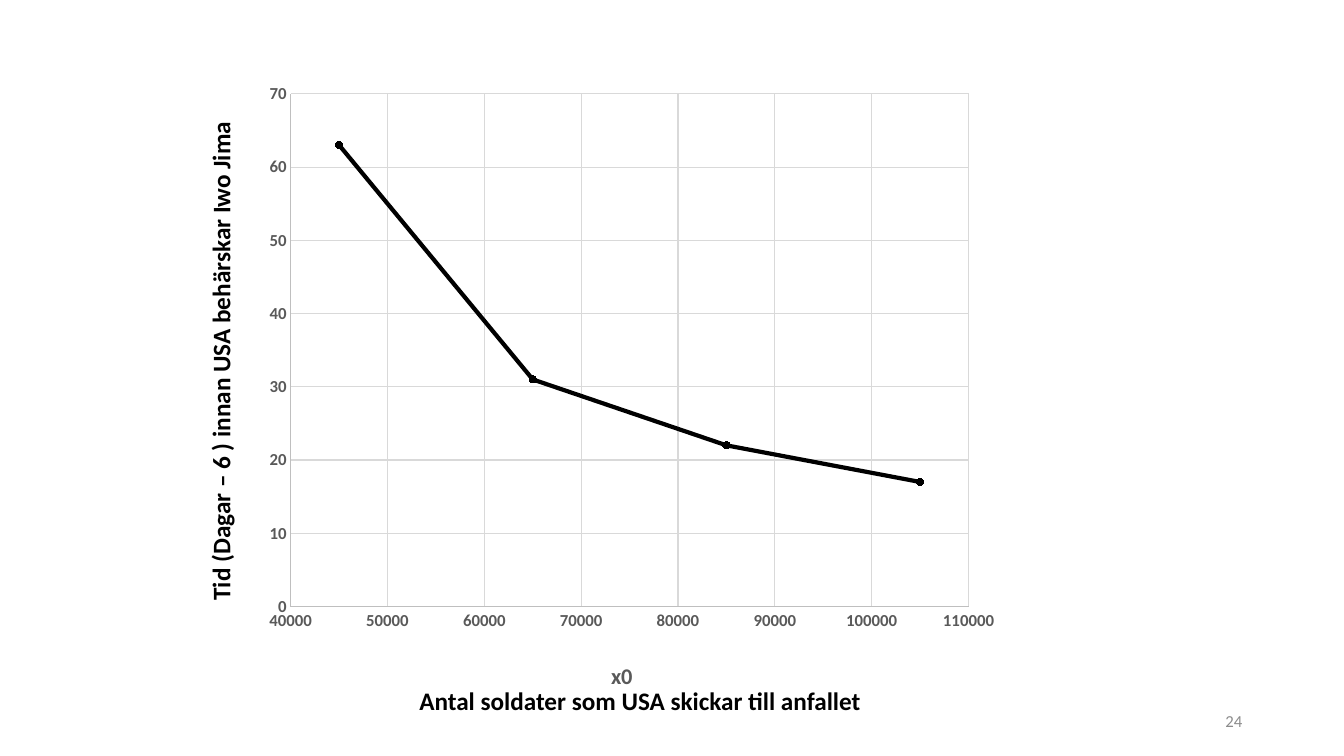
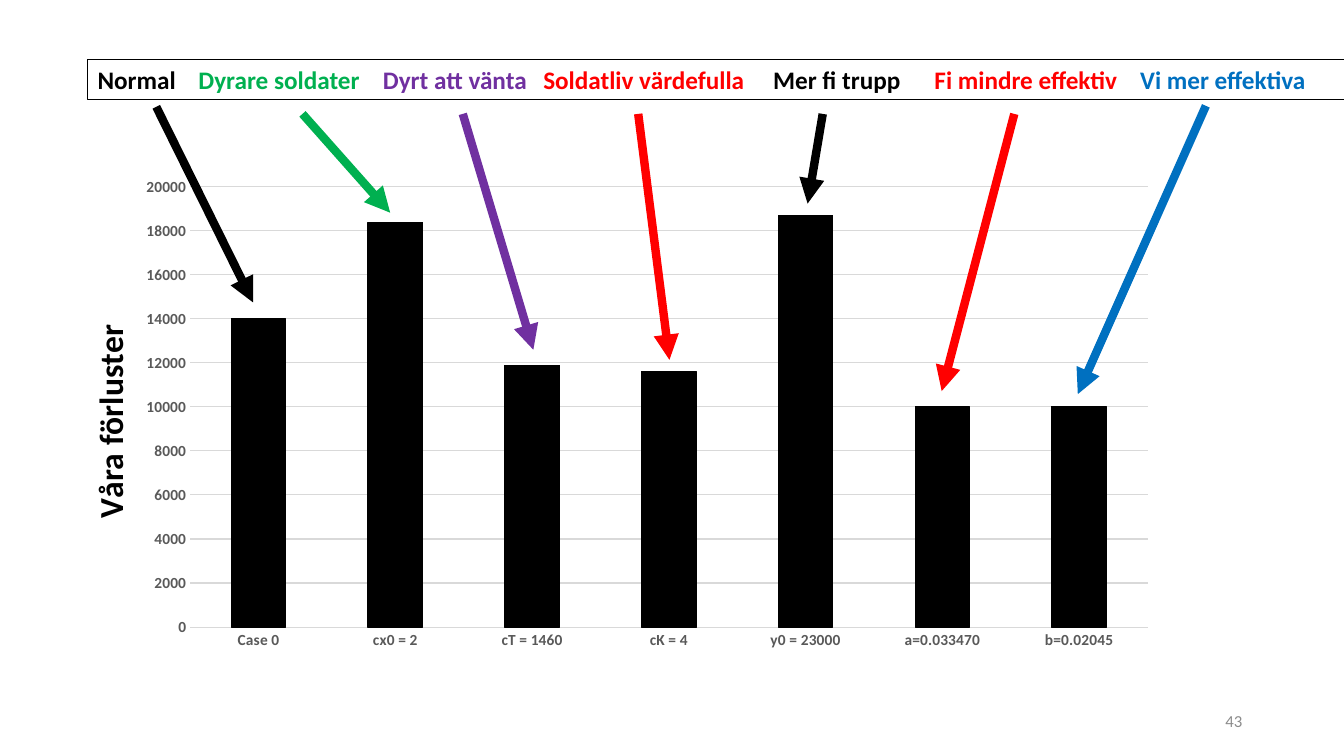
from dataclasses import dataclass

from lxml.etree import SubElement
from pptx import Presentation
from pptx.chart.axis import _BaseAxis as Axis
from pptx.chart.chart import Chart
from pptx.chart.data import CategoryChartData, XyChartData
from pptx.dml.color import RGBColor
from pptx.enum.chart import XL_CHART_TYPE, XL_MARKER_STYLE, XL_TICK_MARK
from pptx.enum.shapes import MSO_CONNECTOR, MSO_SHAPE
from pptx.enum.text import MSO_ANCHOR, PP_ALIGN
from pptx.oxml import parse_xml
from pptx.oxml.ns import nsdecls, qn
from pptx.presentation import Presentation as Deck
from pptx.slide import Slide
from pptx.util import Inches, Pt

FONT = "Calibri"
COLORS = {
    "black": "000000",
    "green": "00B050",
    "purple": "7030A0",
    "red": "FF0000",
    "blue": "0070C0",
    "axis_text": "595959",
    "axis_line": "BFBFBF",
    "grid": "D9D9D9",
    "page": "8C8C8C",
}


@dataclass(frozen=True)
class Box:
    left: float
    top: float
    width: float
    height: float

    def emu(self) -> tuple[int, int, int, int]:
        return (Inches(self.left), Inches(self.top),
                Inches(self.width), Inches(self.height))


@dataclass(frozen=True)
class Callout:
    label: str
    color: str
    tab: float
    start: tuple[float, float]
    end: tuple[float, float]


@dataclass(frozen=True)
class Scale:
    low: float
    high: float
    step: float


CALLOUTS = [
    Callout("Normal", "black", 0, (1.55, 1.06), (2.51, 3)),
    Callout("Dyrare soldater", "green", 1, (3, 1.13), (3.87, 2.11)),
    Callout("Dyrt att vänta", "purple", 2.83, (4.59, 1.13), (5.29, 3.47)),
    Callout("Soldatliv värdefulla", "red", 4.42, (6.33, 1.13), (6.64, 3.57)),
    Callout("Mer fi trupp", "black", 6.7, (8.16, 1.13), (8.01, 2.02)),
    Callout("Fi mindre effektiv", "red", 8.3, (10.06, 1.13), (9.34, 3.88)),
    Callout("Vi mer effektiva", "blue", 10.34, (11.96, 1.05), (10.69, 3.91)),
]
DAYS = [(45000, 63), (65000, 31), (85000, 22), (105000, 17)]
LOSSES = {
    "Case 0": 14000,
    "cx0 = 2": 18400,
    "cT = 1460": 11900,
    "cK = 4": 11600,
    "y0 = 23000": 18700,
    "a=0.033470": 10000,
    "b=0.02045": 10000,
}


def rgb(name: str) -> RGBColor:
    return RGBColor.from_string(COLORS[name])


def style_font(font, size: float, color: str, bold: bool = True) -> None:
    font.name, font.size, font.bold = FONT, Pt(size), bold
    font.color.rgb = rgb(color)


def style_line(line, color: str, width: float = 0.75) -> None:
    line.color.rgb = rgb(color)
    line.width = Pt(width)


def add_text(slide: Slide, text: str, box: Box, size: float = 18,
             color: str = "black", bold: bool = True, wrap: bool = True,
             align: PP_ALIGN = PP_ALIGN.LEFT, rotation: float = 0) -> None:
    sp = slide.shapes.add_textbox(*box.emu())
    sp.rotation = rotation
    tf = sp.text_frame
    tf.word_wrap = wrap
    tf.vertical_anchor = MSO_ANCHOR.MIDDLE
    p = tf.paragraphs[0]
    p.text, p.alignment = text, align
    style_font(p.font, size, color, bold)


def new_slide(prs: Deck, number: int) -> Slide:
    slide = prs.slides.add_slide(prs.slide_layouts[6])
    add_text(slide, str(number), Box(9.42, 6.95, 3, 0.4), 12, "page",
             bold=False, align=PP_ALIGN.RIGHT)
    return slide


def set_layout(parent, index: int, **parts: float) -> None:
    for old in parent.findall(qn("c:layout")):
        parent.remove(old)
    target = '<c:layoutTarget val="inner"/>' if "w" in parts else ""
    modes = "".join(f'<c:{k}Mode val="edge"/>' for k in "xy")
    values = "".join(f'<c:{k} val="{v}"/>' for k, v in parts.items())
    parent.insert(index, parse_xml(
        f'<c:layout {nsdecls("c")}><c:manualLayout>{target}{modes}{values}'
        "</c:manualLayout></c:layout>"))


def style_chart(chart: Chart, x: float, y: float, w: float, h: float) -> None:
    chart.has_legend = False
    chart.has_title = False
    style_font(chart.font, 10, "black", bold=False)
    chart.plots[0].vary_by_categories = False
    plot_area = chart._chartSpace.chart.plotArea
    set_layout(plot_area, 0, x=x, y=y, w=w, h=h)


def style_axis(axis: Axis, size: float, line: str | None, grid: bool,
               scale: Scale | None = None) -> None:
    axis.major_tick_mark = axis.minor_tick_mark = XL_TICK_MARK.NONE
    style_font(axis.tick_labels.font, size, "axis_text")
    if line:
        style_line(axis.format.line, line)
    else:
        axis.format.line.fill.background()
    axis.has_major_gridlines = grid
    if grid:
        style_line(axis.major_gridlines.format.line, "grid")
    if scale:
        axis.minimum_scale, axis.maximum_scale = scale.low, scale.high
        axis.major_unit = scale.step


def title_axis(axis: Axis, text: str, size: float, color: str,
               x: float, y: float) -> None:
    title = axis.axis_title
    p = title.text_frame.paragraphs[0]
    p.text = text
    style_font(p.font, size, color)
    set_layout(title._element, 1, x=x, y=y)


def add_arrow(slide: Slide, callout: Callout) -> None:
    ends = [Inches(v) for v in (*callout.start, *callout.end)]
    cx = slide.shapes.add_connector(MSO_CONNECTOR.STRAIGHT, *ends)
    style_line(cx.line, callout.color, 6)
    SubElement(cx.line._get_or_add_ln(), qn("a:tailEnd"), type="triangle")
    SubElement(cx._element.spPr, qn("a:effectLst"))


def add_label_bar(slide: Slide, box: Box) -> None:
    sp = slide.shapes.add_shape(MSO_SHAPE.RECTANGLE, *box.emu())
    sp.shadow.inherit = False
    sp.fill.background()
    style_line(sp.line, "black")
    p = sp.text_frame.paragraphs[0]
    p.alignment = PP_ALIGN.LEFT
    tabs = SubElement(p._p.get_or_add_pPr(), qn("a:tabLst"))
    for i, callout in enumerate(CALLOUTS):
        if i:
            SubElement(tabs, qn("a:tab"), pos=str(Inches(callout.tab)), algn="l")
        r = p.add_run()
        r.text = ("\t" if i else "") + callout.label
        style_font(r.font, 18, callout.color)


def build_days_slide(prs: Deck) -> None:
    slide = new_slide(prs, 24)
    data = XyChartData()
    points = data.add_series("Series 1")
    for soldiers, days in DAYS:
        points.add_data_point(soldiers, days)
    chart = slide.shapes.add_chart(
        XL_CHART_TYPE.XY_SCATTER_LINES, *Box(2.51, 0.68, 7.47, 6.28).emu(), data).chart
    style_chart(chart, 0.05, 0.04, 0.9, 0.81)
    style_axis(chart.category_axis, 12, "axis_line", True, Scale(40000, 110000, 10000))
    style_axis(chart.value_axis, 12, "axis_line", True, Scale(0, 70, 10))
    title_axis(chart.category_axis, "x0", 16, "axis_text", 0.47, 0.93)
    series = chart.plots[0].series[0]
    series.smooth = False
    style_line(series.format.line, "black", 3)
    marker = series.marker
    marker.style, marker.size = XL_MARKER_STYLE.CIRCLE, 5
    marker.format.fill.solid()
    marker.format.fill.fore_color.rgb = rgb("black")
    style_line(marker.format.line, "black")
    add_text(slide, "Antal soldater som USA skickar till anfallet",
             Box(4.06, 6.75, 4.62, 0.4), wrap=False)
    add_text(slide, "Tid (Dagar – 6 ) innan USA behärskar Iwo Jima",
             Box(-0.76, 2.91, 5.89, 0.4), rotation=270)


def build_losses_slide(prs: Deck) -> None:
    slide = new_slide(prs, 43)
    data = CategoryChartData()
    data.categories = list(LOSSES)
    data.add_series("Series 1", list(LOSSES.values()))
    chart = slide.shapes.add_chart(
        XL_CHART_TYPE.COLUMN_STACKED, *Box(0.7, 1.69, 10.79, 5.46).emu(), data).chart
    style_chart(chart, 0.11, 0.03, 0.88, 0.8)
    style_axis(chart.category_axis, 11, "grid", False)
    style_axis(chart.value_axis, 11, None, True, Scale(0, 20000, 2000))
    title_axis(chart.value_axis, "Våra förluster", 24, "black", 0.01, 0.27)
    body = chart.value_axis.axis_title.text_frame._txBody.bodyPr
    body.set("rot", "-5400000")
    body.set("vert", "horz")
    plot = chart.plots[0]
    plot.gap_width, plot.overlap = 150, 100
    bars = plot.series[0].format
    bars.fill.solid()
    bars.fill.fore_color.rgb = rgb("black")
    style_line(bars.line, "black")
    add_label_bar(slide, Box(0.87, 0.59, 12.5, 0.4))
    for callout in CALLOUTS:
        add_arrow(slide, callout)


def main() -> None:
    prs = Presentation()
    prs.slide_width, prs.slide_height = Inches(13.33), Inches(7.5)
    build_days_slide(prs)
    build_losses_slide(prs)
    prs.save("out.pptx")


if __name__ == "__main__":
    main()
